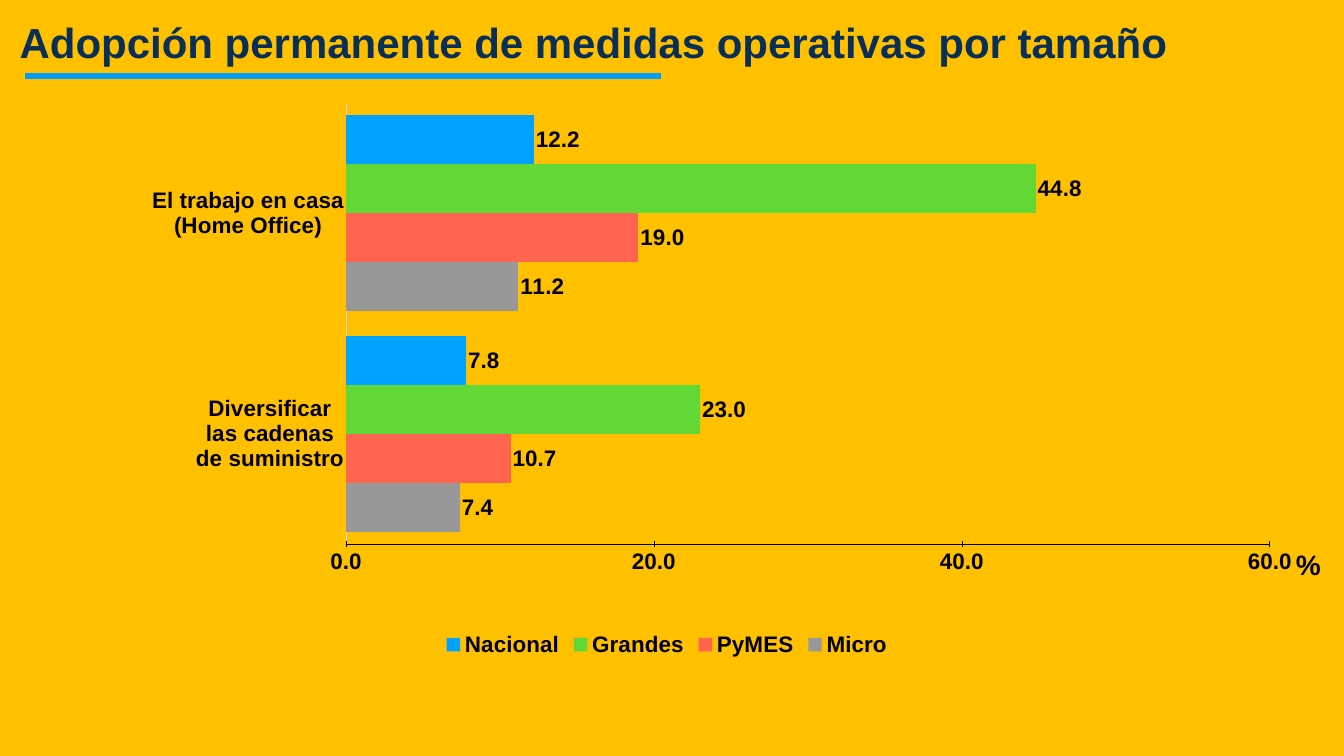
from dataclasses import dataclass

from lxml import etree
from pptx import Presentation
from pptx.chart.data import CategoryChartData
from pptx.dml.color import RGBColor
from pptx.enum import chart as ch, shapes, text
from pptx.oxml.ns import qn
from pptx.util import Cm, Pt


@dataclass(frozen=True)
class Theme:
    font: str = "Arial"
    back: str = "FFC000"
    navy: str = "092F57"
    ink: str = "000000"
    rule: str = "009EF9"
    pale: str = "D9D9D9"
    head: int = 60
    unit: int = 40
    label: int = 32


THEME = Theme()
CATS = ["Diversificar\nlas cadenas\nde suministro",
        "El trabajo en casa\n(Home Office)"]
SERIES = [("Micro", (7.4, 11.2), "989898"),
          ("PyMES", (10.7, 19.0), "FF644E"),
          ("Grandes", (23.0, 44.8), "61D836"),
          ("Nacional", (7.8, 12.2), "00A2FF")]
FORMAT = "##0.0"


def style(font, size, color=THEME.ink):
    font.name, font.size, font.bold = THEME.font, Pt(size), True
    font.color.rgb = RGBColor.from_string(color)


def paint(line, color, width):
    line.color.rgb = RGBColor.from_string(color)
    line.width = Pt(width)


def place(shape, box):
    shape.left, shape.top, shape.width, shape.height = map(Cm, box)


def write(shape, words, size, color, align):
    frame = shape.text_frame
    frame.word_wrap = True
    frame.auto_size = text.MSO_AUTO_SIZE.NONE
    frame.vertical_anchor = text.MSO_ANCHOR.MIDDLE
    frame.margin_left = frame.margin_right = Cm(0.13)
    frame.margin_top = frame.margin_bottom = Cm(0.13)
    frame.text = words
    para = frame.paragraphs[0]
    para.alignment = align
    para.line_spacing = 0.9
    style(para.font, size, color)


def add_head(slide, box):
    """Title with the rule that runs under its left half."""
    left, top, width, _ = box
    title = slide.shapes.title
    place(title, box)
    write(title, "Adopción permanente de medidas operativas por tamaño",
          THEME.head, THEME.navy, text.PP_ALIGN.LEFT)
    start, level = left + 0.41, top + 3.3
    rule = slide.shapes.add_connector(
        shapes.MSO_CONNECTOR.STRAIGHT, Cm(start), Cm(level),
        Cm(start + width / 2), Cm(level))
    paint(rule.line, THEME.rule, 9)
    etree.SubElement(rule._element.spPr, qn("a:effectLst"))


def set_plot(chart, x, y, w, h):
    """Fix the inner plot area, in fractions of the chart."""
    area = chart._chartSpace.chart.plotArea
    for old in area.findall(qn("c:layout")):
        area.remove(old)
    layout = etree.Element(qn("c:layout"))
    area.insert(0, layout)
    manual = etree.SubElement(layout, qn("c:manualLayout"))
    parts = [("layoutTarget", "inner"), ("xMode", "edge"), ("yMode", "edge"),
             ("x", x), ("y", y), ("w", w), ("h", h)]
    for tag, value in parts:
        etree.SubElement(manual, qn(f"c:{tag}")).set("val", str(value))


def set_axes(chart):
    cat, val = chart.category_axis, chart.value_axis
    for axis, color in ((cat, THEME.pale), (val, THEME.ink)):
        axis.has_major_gridlines = False
        style(axis.tick_labels.font, THEME.label)
        paint(axis.format.line, color, 0.75)
    cat.major_tick_mark = ch.XL_TICK_MARK.NONE
    val.major_tick_mark = ch.XL_TICK_MARK.CROSS
    val.minimum_scale, val.maximum_scale, val.major_unit = 0, 60, 20
    val.tick_labels.number_format = FORMAT
    val.tick_labels.number_format_is_linked = False


def add_bars(slide, box):
    data = CategoryChartData(number_format=FORMAT)
    data.categories = CATS
    for name, values, _ in SERIES:
        data.add_series(name, values)
    chart = slide.shapes.add_chart(
        ch.XL_CHART_TYPE.BAR_CLUSTERED, *map(Cm, box), data).chart
    style(chart.font, THEME.label)
    chart.has_title = False
    set_plot(chart, 0.25, 0, 0.72, 0.79)
    set_axes(chart)

    plot = chart.plots[0]
    plot.gap_width, plot.overlap, plot.vary_by_categories = 50, 0, False
    for bars, (_, _, color) in zip(plot.series, SERIES):
        bars.format.fill.solid()
        bars.format.fill.fore_color.rgb = RGBColor.from_string(color)
        bars.invert_if_negative = False
        labels = bars.data_labels
        labels.show_value = True
        labels.position = ch.XL_LABEL_POSITION.OUTSIDE_END
        labels.number_format = FORMAT
        labels.number_format_is_linked = False
        style(labels.font, THEME.label)

    chart.has_legend = True
    chart.legend.position = ch.XL_LEGEND_POSITION.BOTTOM
    chart.legend.include_in_layout = False
    style(chart.legend.font, THEME.label)


def add_unit(slide, box):
    sign = slide.shapes.add_textbox(*map(Cm, box))
    write(sign, "%", THEME.unit, THEME.ink, text.PP_ALIGN.CENTER)


def main():
    deck = Presentation()
    deck.slide_width, deck.slide_height = Cm(67.74), Cm(38.1)
    slide = deck.slides.add_slide(deck.slide_layouts[5])
    fill = slide.background.fill
    fill.solid()
    fill.fore_color.rgb = RGBColor.from_string(THEME.back)
    add_head(slide, (0.86, 0.53, 64.14, 3.48))
    add_bars(slide, (1.27, 5.16, 64.67, 28.19))
    add_unit(slide, (64.49, 27.48, 2.9, 2.16))
    deck.save("out.pptx")


if __name__ == "__main__":
    main()
